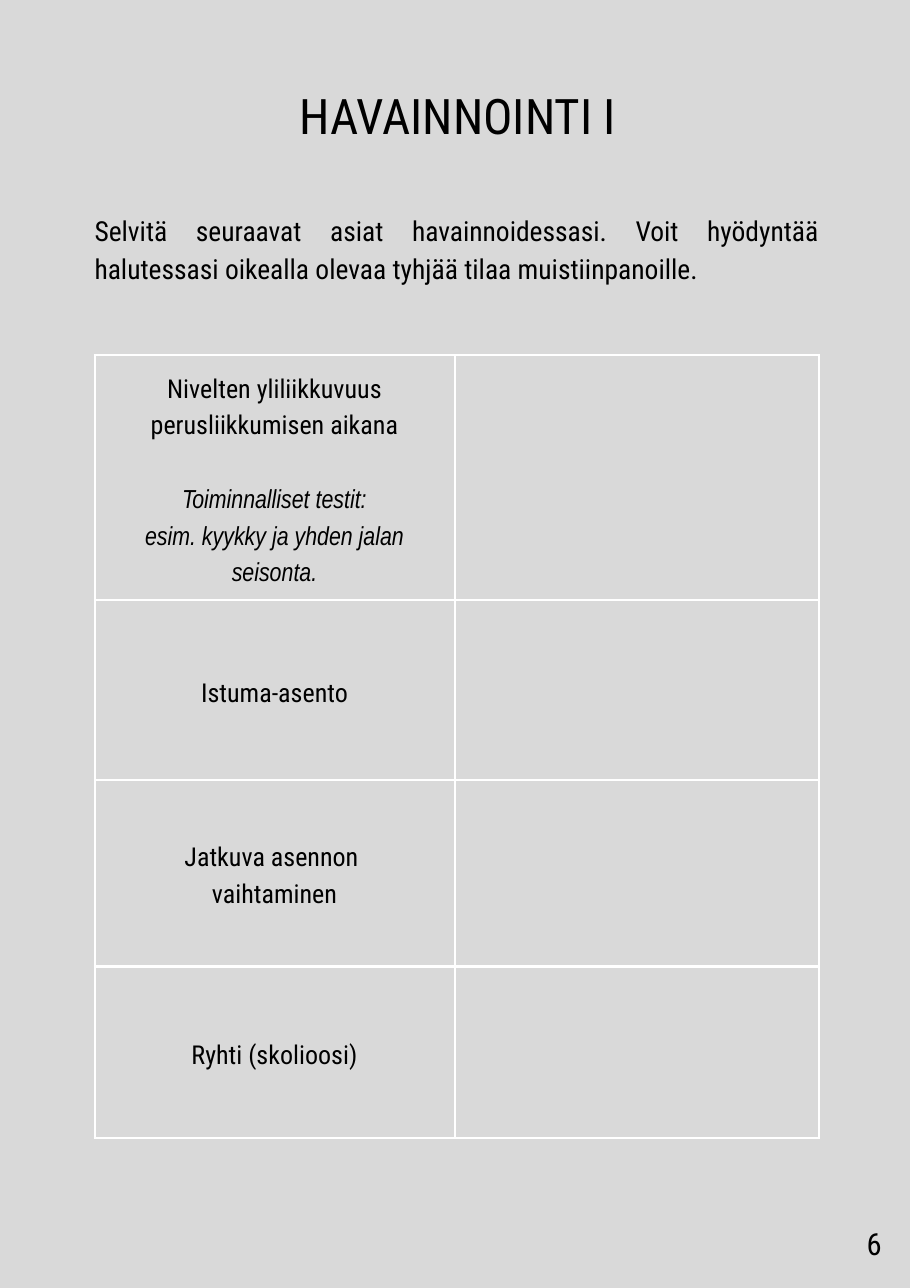
from lxml.etree import SubElement
from pptx import Presentation
from pptx.dml.color import RGBColor
from pptx.enum.text import MSO_ANCHOR as Anchor, PP_ALIGN as Align
from pptx.oxml.ns import qn
from pptx.util import Cm, Pt

COLORS = {"page": "D9D9D9", "ink": "000000", "grid": "FFFFFF"}
MAIN_FONT = "Roboto Condensed"
ACCENT_FONT = "Arial Narrow"
MARGIN, CONTENT_WIDTH = 2.18, 16.71


def write(paragraph, text, size=17, font=MAIN_FONT, italic=False,
          align=Align.CENTER, before=0):
    """Fill a paragraph; lines are 1.4 times the text size."""
    paragraph.alignment = align
    paragraph.line_spacing = Pt(round(size * 1.4, 1))
    paragraph.space_before = Pt(before)
    run = paragraph.add_run()
    run.text = text
    run.font.size = Pt(size)
    run.font.name = font
    run.font.italic = italic
    run.font.color.rgb = RGBColor.from_string(COLORS["ink"])


class Worksheet:
    column_widths = (8.3, 8.41)
    cell_margin = 0.3
    border = Pt(1.5)

    def __init__(self, deck):
        self.slide = deck.slides.add_slide(deck.slide_layouts[6])
        background = self.slide.background.fill
        background.solid()
        background.fore_color.rgb = RGBColor.from_string(COLORS["page"])

    def text(self, content, left, top, width, height, wrap=True, **style):
        box = self.slide.shapes.add_textbox(
            Cm(left), Cm(top), Cm(width), Cm(height))
        frame = box.text_frame
        frame.word_wrap = wrap
        frame.margin_left = frame.margin_right = 0
        frame.margin_top = frame.margin_bottom = 0
        write(frame.paragraphs[0], content, **style)

    def table(self, top, rows):
        """Each row is a height and the lines of its topic cell."""
        heights = [height for height, _ in rows]
        grid = self.slide.shapes.add_table(
            len(rows), len(self.column_widths), Cm(MARGIN), Cm(top),
            Cm(CONTENT_WIDTH), Cm(sum(heights))).table
        grid.first_row = grid.horz_banding = False
        for column, width in zip(grid.columns, self.column_widths):
            column.width = Cm(width)
        for row, (height, lines) in zip(grid.rows, rows):
            row.height = Cm(height)
            for cell in row.cells:
                self.style_cell(cell)
            frame = row.cells[0].text_frame
            for index, (line, style) in enumerate(lines):
                paragraph = frame.add_paragraph() if index else frame.paragraphs[0]
                write(paragraph, line, **style)

    def style_cell(self, cell):
        cell.vertical_anchor = Anchor.MIDDLE
        cell.margin_left = cell.margin_right = Cm(self.cell_margin)
        cell.margin_top = cell.margin_bottom = Cm(self.cell_margin)
        properties = cell._tc.get_or_add_tcPr()
        for side in ("lnL", "lnR", "lnT", "lnB"):
            line = SubElement(properties, qn(f"a:{side}"), w=str(self.border))
            fill = SubElement(line, qn("a:solidFill"))
            SubElement(fill, qn("a:srgbClr"), val=COLORS["grid"])
        cell.fill.background()


def main():
    deck = Presentation()
    deck.slide_width, deck.slide_height = Cm(20.98), Cm(29.69)
    sheet = Worksheet(deck)

    # Heading and instructions
    sheet.text("HAVAINNOINTI I", 1.63, 1.75, 17.86, 1.68, size=32)
    sheet.text("Selvitä seuraavat asiat havainnoidessasi. Voit hyödyntää "
               "halutessasi oikealla olevaa tyhjää tilaa muistiinpanoille.",
               MARGIN, 4.8, CONTENT_WIDTH, 1.83, size=18, align=Align.JUSTIFY)

    # Observation topics with room for notes
    example = {"font": ACCENT_FONT, "italic": True}
    sheet.table(8.18, [
        (5.66, [("Nivelten yliliikkuvuus", {}),
                ("perusliikkumisen aikana", {}),
                ("Toiminnalliset testit:", {**example, "before": 23.8}),
                ("esim. kyykky ja yhden jalan seisonta.", example)]),
        (4.14, [("Istuma-asento", {})]),
        (4.29, [("Jatkuva asennon ", {}), ("vaihtaminen", {})]),
    ])

    # Posture
    sheet.table(22.28, [(3.96, [("Ryhti (skolioosi)", {})])])

    # Page number
    sheet.text("6", 19.94, 28.09, 0.43, 0.66, wrap=False, size=20)

    deck.save("out.pptx")


if __name__ == "__main__":
    main()
